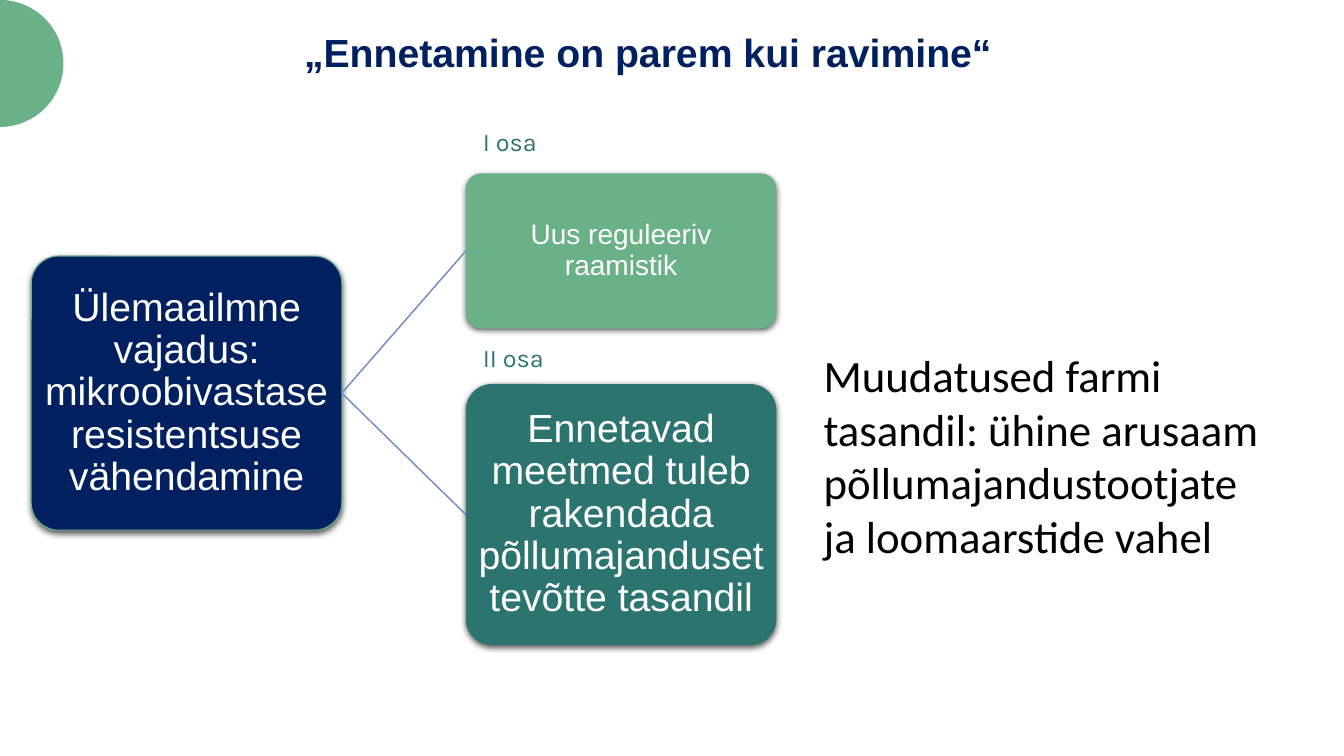
from math import cos, pi, sin

from lxml import etree
from pptx import Presentation
from pptx.dml.color import RGBColor
from pptx.enum.shapes import MSO_CONNECTOR, MSO_SHAPE
from pptx.enum.text import MSO_ANCHOR, PP_ALIGN
from pptx.oxml import parse_xml
from pptx.oxml.ns import qn
from pptx.util import Inches, Pt

ROUNDED = MSO_SHAPE.ROUNDED_RECTANGLE
STRAIGHT = MSO_CONNECTOR.STRAIGHT
TOP, MIDDLE = MSO_ANCHOR.TOP, MSO_ANCHOR.MIDDLE
LEFT, CENTER = PP_ALIGN.LEFT, PP_ALIGN.CENTER
LEFT_SIDE, RIGHT_SIDE = 1, 3

NAVY = RGBColor(0x00, 0x20, 0x60)
GREEN = RGBColor(0x6B, 0xB1, 0x88)
TEAL = RGBColor(0x2C, 0x74, 0x70)
BLUE = RGBColor(0x6D, 0x89, 0xCB)
WHITE = RGBColor(0xFF, 0xFF, 0xFF)
BLACK = RGBColor(0x00, 0x00, 0x00)

SHADOW = (
    '<a:outerShdw xmlns:a="http://schemas.openxmlformats.org/drawingml/2006/main"'
    ' blurRad="57150" dist="19050" dir="5400000" algn="ctr" rotWithShape="0">'
    '<a:srgbClr val="000000"><a:alpha val="63000"/></a:srgbClr></a:outerShdw>'
)


def write(shape, text, size, color, font="Arial", bold=False, align=LEFT,
          anchor=TOP, spacing=1.0, inset_x=0.1, inset_y=0.05):
    frame = shape.text_frame
    frame.word_wrap = True
    frame.vertical_anchor = anchor
    frame.margin_left = frame.margin_right = Inches(inset_x)
    frame.margin_top = frame.margin_bottom = Inches(inset_y)
    para = frame.paragraphs[0]
    para.text = text
    para.alignment = align
    para.line_spacing = spacing
    for span in para.runs:
        span.font.name = font
        span.font.size = Pt(size)
        span.font.bold = bold
        span.font.color.rgb = color


deck = Presentation()
deck.slide_width, deck.slide_height = Inches(13.33), Inches(7.5)
page = deck.slides.add_slide(deck.slide_layouts[5])

# Half circle in the corner
RADIUS, STEPS = 0.63, 60
angles = [pi * step / STEPS - pi / 2 for step in range(STEPS + 1)]
arc = [(Inches(RADIUS * cos(angle)), Inches(RADIUS * (1 + sin(angle))))
       for angle in angles]
builder = page.shapes.build_freeform(*arc[0])
builder.add_line_segments(arc[1:], close=True)
half_circle = builder.convert_to_shape()
half_circle.shadow.inherit = False
half_circle.fill.solid()
half_circle.fill.fore_color.rgb = GREEN
half_circle.line.fill.background()

# Title
title = page.shapes.title
title.left, title.top = Inches(0.17), Inches(0.23)
title.width, title.height = Inches(12.51), Inches(0.57)
write(title, "„Ennetamine on parem kui ravimine“", 28, NAVY, bold=True, align=CENTER)

# Tree boxes: the need first, then its two parts
BOX_WIDTH = 3.08
tree = [
    (0.31, 2.54, 2.72, NAVY, GREEN, 28, 0.02,
     "Ülemaailmne vajadus: mikroobivastase resistentsuse vähendamine"),
    (4.62, 1.72, 1.54, GREEN, None, 20, 0.01, "Uus reguleeriv raamistik"),
    (4.62, 3.81, 2.59, TEAL, None, 28, 0.02,
     "Ennetavad meetmed tuleb rakendada põllumajandusettevõtte tasandil"),
]
boxes = []
for left, top, height, fill, outline, size, inset, text in tree:
    box = page.shapes.add_shape(ROUNDED, Inches(left), Inches(top),
                                Inches(BOX_WIDTH), Inches(height))
    box.adjustments[0] = 0.1
    box.fill.solid()
    box.fill.fore_color.rgb = fill
    if outline is None:
        box.line.fill.background()
    else:
        box.line.color.rgb = outline
        box.line.width = Pt(0.75)
    box.shadow.inherit = False
    box.element.spPr.find(qn("a:effectLst")).append(parse_xml(SHADOW))
    write(box, text, size, WHITE, align=CENTER, anchor=MIDDLE, spacing=0.9,
          inset_x=inset, inset_y=inset)
    boxes.append(box)

# Branches from the need to each part
need, *parts = boxes
for part in parts:
    branch = page.shapes.add_connector(STRAIGHT, 0, 0, 0, 0)
    branch.begin_connect(need, RIGHT_SIDE)
    branch.end_connect(part, LEFT_SIDE)
    branch.line.color.rgb = BLUE
    branch.line.width = Pt(1)
    etree.SubElement(branch.element.spPr, qn("a:effectLst"))

# Part labels and the closing remark
remark = ("Muudatused farmi tasandil: ühine arusaam põllumajandustootjate\v"
          "ja loomaarstide vahel")
for left, top, width, height, text, size, color, font in [
    (4.69, 1.2, 1.08, 0.4, "I osa", 18, TEAL, "Karla"),
    (4.69, 3.35, 1.08, 0.4, "II osa", 18, TEAL, "Karla"),
    (8.07, 3.4, 5.13, 2.26, remark, 32, BLACK, "Calibri"),
]:
    label = page.shapes.add_textbox(Inches(left), Inches(top),
                                    Inches(width), Inches(height))
    write(label, text, size, color, font=font)

deck.save("out.pptx")
